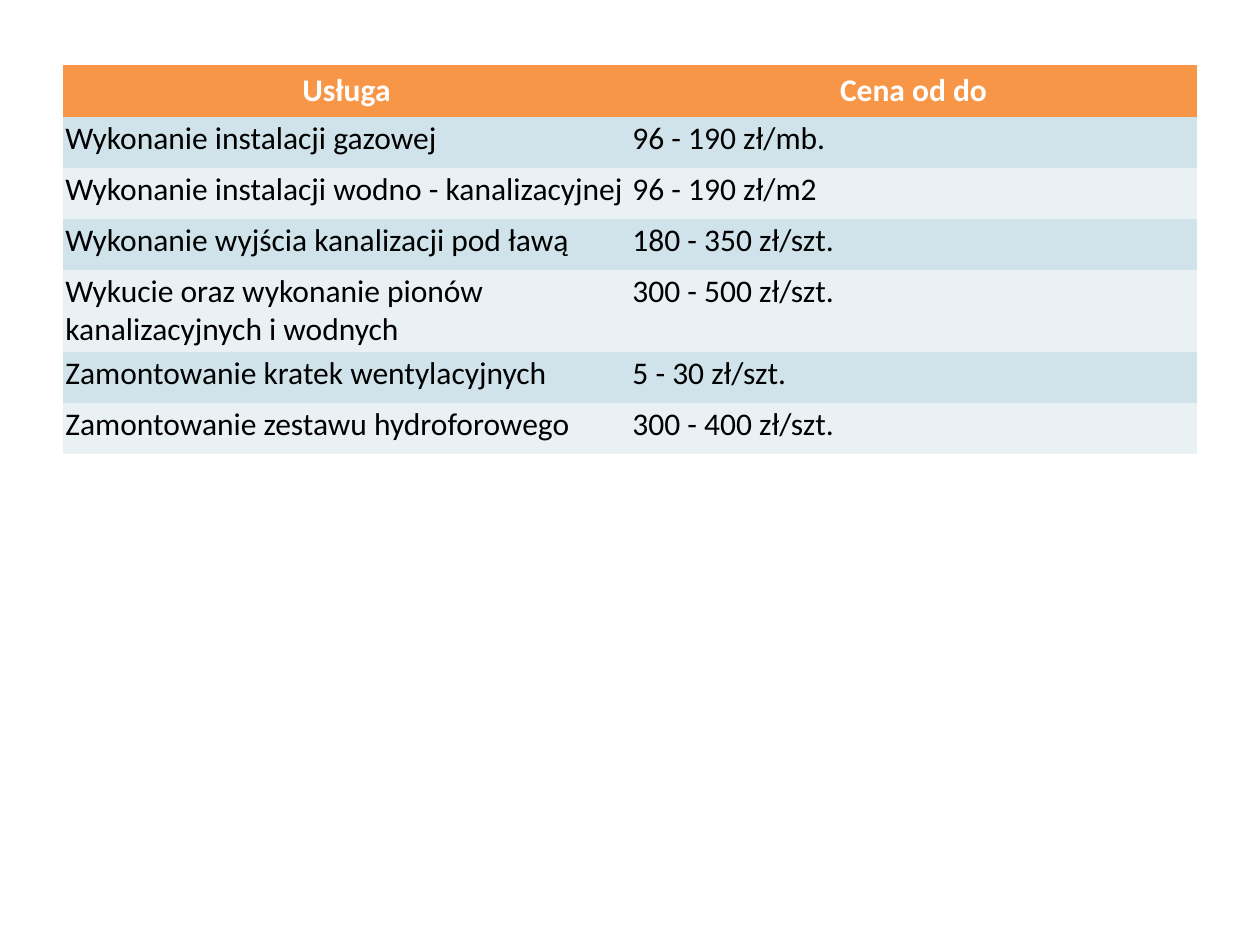
from pptx import Presentation
from pptx.dml.color import RGBColor
from pptx.enum.text import PP_ALIGN
from pptx.oxml.ns import qn
from pptx.util import Cm, Pt

LEFT, CENTER = PP_ALIGN.LEFT, PP_ALIGN.CENTER
PLAIN = "{2D5ABB26-0587-4C30-8999-92F81FD0307C}"  # no style, no grid

HEAD = ("Usługa", "Cena od do")
PRICES = [
    ("Wykonanie instalacji gazowej", "96 - 190 zł/mb."),
    ("Wykonanie instalacji wodno - kanalizacyjnej", "96 - 190 zł/m2"),
    ("Wykonanie wyjścia kanalizacji pod ławą", "180 - 350 zł/szt."),
    ("Wykucie oraz wykonanie pionów kanalizacyjnych i wodnych",
     "300 - 500 zł/szt."),
    ("Zamontowanie kratek wentylacyjnych", "5 - 30 zł/szt."),
    ("Zamontowanie zestawu hydroforowego", "300 - 400 zł/szt."),
]
BANDS = ("D0E3EA", "E9F1F5")
ORANGE, WHITE, BLACK = "F79646", "FFFFFF", "000000"
X, Y, WIDTH, HEIGHT = 1.27, 1.32, 22.86, 7.82
ROW, INSET = 1.03, 0.05


def color(code):
    return RGBColor.from_string(code)


def write(cell, text, fill, ink, bold, align):
    cell.fill.solid()
    cell.fill.fore_color.rgb = color(fill)
    para = cell.text_frame.paragraphs[0]
    para.alignment = align
    run = para.add_run()
    run.text = text
    font = run.font
    font.name, font.size, font.bold = "Calibri", Pt(18), bold
    font.color.rgb = color(ink)


def main():
    deck = Presentation()
    deck.slide_width, deck.slide_height = Cm(25.4), Cm(19.05)
    slide = deck.slides.add_slide(deck.slide_layouts[6])

    frame = slide.shapes.add_table(len(PRICES) + 1, len(HEAD), Cm(X), Cm(Y),
                                   Cm(WIDTH), Cm(HEIGHT))
    next(frame.element.iter(qn("a:tableStyleId"))).text = PLAIN
    table = frame.table
    for row in table.rows:
        row.height = Cm(ROW)
    frame.height = Cm(HEIGHT)  # the two-line row grows to fit its text

    for col, text in enumerate(HEAD):
        write(table.cell(0, col), text, ORANGE, WHITE, True, CENTER)
    for row, texts in enumerate(PRICES):
        for col, text in enumerate(texts):
            cell = table.cell(row + 1, col)
            cell.margin_left = cell.margin_right = Cm(INSET)
            cell.margin_top = cell.margin_bottom = Cm(INSET)
            write(cell, text, BANDS[row % 2], BLACK, False, LEFT)

    deck.save("out.pptx")


if __name__ == "__main__":
    main()
